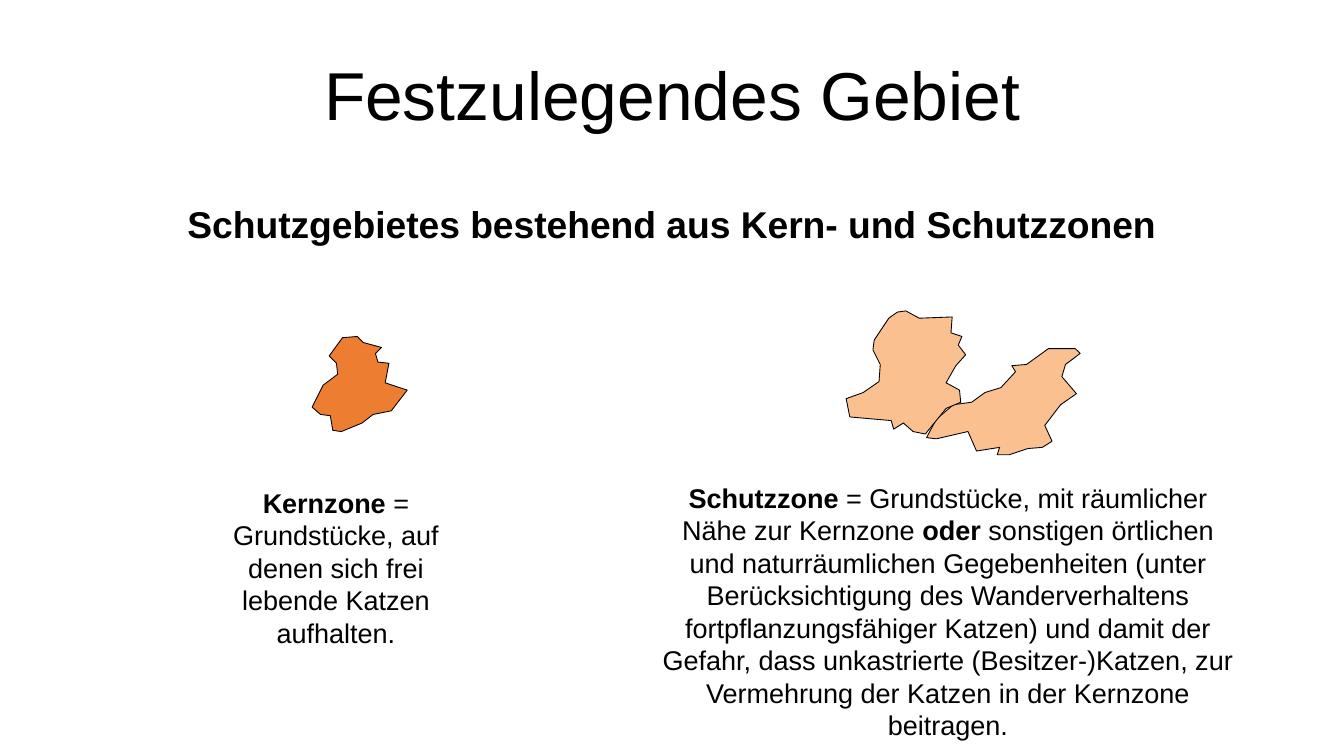
from dataclasses import dataclass

from pptx import Presentation
from pptx import util as u
from pptx.dml.color import RGBColor
from pptx.enum import text


@dataclass(frozen=True)
class Theme:
    font: str = "Arial"
    ink: str = "000000"
    core: str = "ED7D31"
    buffer: str = "FAC090"
    title: int = 40
    lead: int = 22
    body: int = 16
    line: float = 0.5


@dataclass(frozen=True)
class Label:
    box: tuple[float, float, float, float]
    size: int
    runs: list[tuple[str, bool]]
    inset: tuple[float, float] = (0, 0)
    anchor: text.MSO_ANCHOR = text.MSO_ANCHOR.TOP


@dataclass(frozen=True)
class Zone:
    fill: str
    points: list[tuple[int, int]]


THEME = Theme()
UNIT = u.Cm(2.54) / 100
PAD = (0.25, 0.13)

LABELS = [
    Label((1.4, 0.63, 25.2, 2.63), THEME.title,
          [("Festzulegendes Gebiet", False)], anchor=text.MSO_ANCHOR.MIDDLE),
    Label((0, 4.19, 28, 1.32), THEME.lead,
          [("Schutzgebietes bestehend aus Kern- und Schutzzonen", True)]),
    Label((4.5, 10, 5, 3.38), THEME.body,
          [("Kernzone", True),
           (" = Grundstücke, auf denen sich frei lebende Katzen aufhalten.", False)], PAD),
    Label((13.5, 9.9, 12.5, 5.33), THEME.body,
          [("Schutzzone", True),
           (" = Grundstücke, mit räumlicher Nähe zur Kernzone ", False),
           ("oder", True),
           (" sonstigen örtlichen und naturräumlichen Gegebenheiten (unter "
            "Berücksichtigung des Wanderverhaltens fortpflanzungsfähiger Katzen) "
            "und damit der Gefahr, dass unkastrierte (Besitzer-)Katzen, zur "
            "Vermehrung der Katzen in der Kernzone beitragen.", False)], PAD),
]

ZONES = [
    Zone(THEME.core, [
        (293, 276), (281, 277), (270, 292), (276, 298), (277, 307), (265, 316),
        (256, 334), (263, 340), (271, 341), (273, 353), (280, 354), (297, 347),
        (306, 340), (321, 337), (334, 320), (316, 314), (319, 298), (310, 297),
        (308, 290), (313, 285), (298, 281)]),
    Zone(THEME.buffer, [
        (830, 300), (833, 305), (821, 318), (808, 322), (797, 330), (782, 332),
        (768, 344), (760, 359), (768, 360), (794, 354), (801, 370), (820, 367),
        (818, 373), (828, 373), (843, 368), (855, 367), (863, 362), (857, 349),
        (870, 332), (883, 323), (871, 309), (874, 299), (886, 290), (882, 286),
        (860, 286), (842, 299)]),
    Zone(THEME.buffer, [
        (743, 255), (754, 261), (781, 260), (780, 273), (789, 276), (786, 283),
        (792, 291), (784, 300), (776, 314), (787, 320), (788, 330), (776, 335),
        (759, 356), (749, 354), (741, 347), (733, 352), (731, 345), (697, 342),
        (694, 327), (708, 322), (721, 313), (722, 299), (716, 287), (717, 279),
        (729, 261), (736, 256)]),
]


def color(code: str) -> RGBColor:
    """Turn a hex code into a colour."""
    return RGBColor.from_string(code)


def write(slide, label: Label) -> None:
    """Place a centred text box."""
    frame = slide.shapes.add_textbox(*map(u.Cm, label.box)).text_frame
    frame.word_wrap = True
    frame.vertical_anchor = label.anchor
    frame.margin_left = frame.margin_right = u.Cm(label.inset[0])
    frame.margin_top = frame.margin_bottom = u.Cm(label.inset[1])
    para = frame.paragraphs[0]
    para.alignment = text.PP_ALIGN.CENTER
    para.font.name = THEME.font
    para.font.size = u.Pt(label.size)
    para.font.color.rgb = color(THEME.ink)
    for words, bold in label.runs:
        run = para.add_run()
        run.text = words
        run.font.bold = bold


def trace(slide, zone: Zone) -> None:
    """Draw the closed outline of a zone."""
    pen = slide.shapes.build_freeform(*zone.points[0], scale=UNIT)
    pen.add_line_segments(zone.points[1:], close=True)
    shape = pen.convert_to_shape()
    shape.shadow.inherit = False
    shape.fill.solid()
    shape.fill.fore_color.rgb = color(zone.fill)
    shape.line.color.rgb = color(THEME.ink)
    shape.line.width = u.Pt(THEME.line)


def main() -> None:
    """Build and save the slide."""
    deck = Presentation()
    deck.slide_width, deck.slide_height = u.Cm(28), u.Cm(15.75)
    slide = deck.slides.add_slide(deck.slide_layouts[6])
    for zone in ZONES:
        trace(slide, zone)
    for label in LABELS:
        write(slide, label)
    deck.save("out.pptx")


if __name__ == "__main__":
    main()
